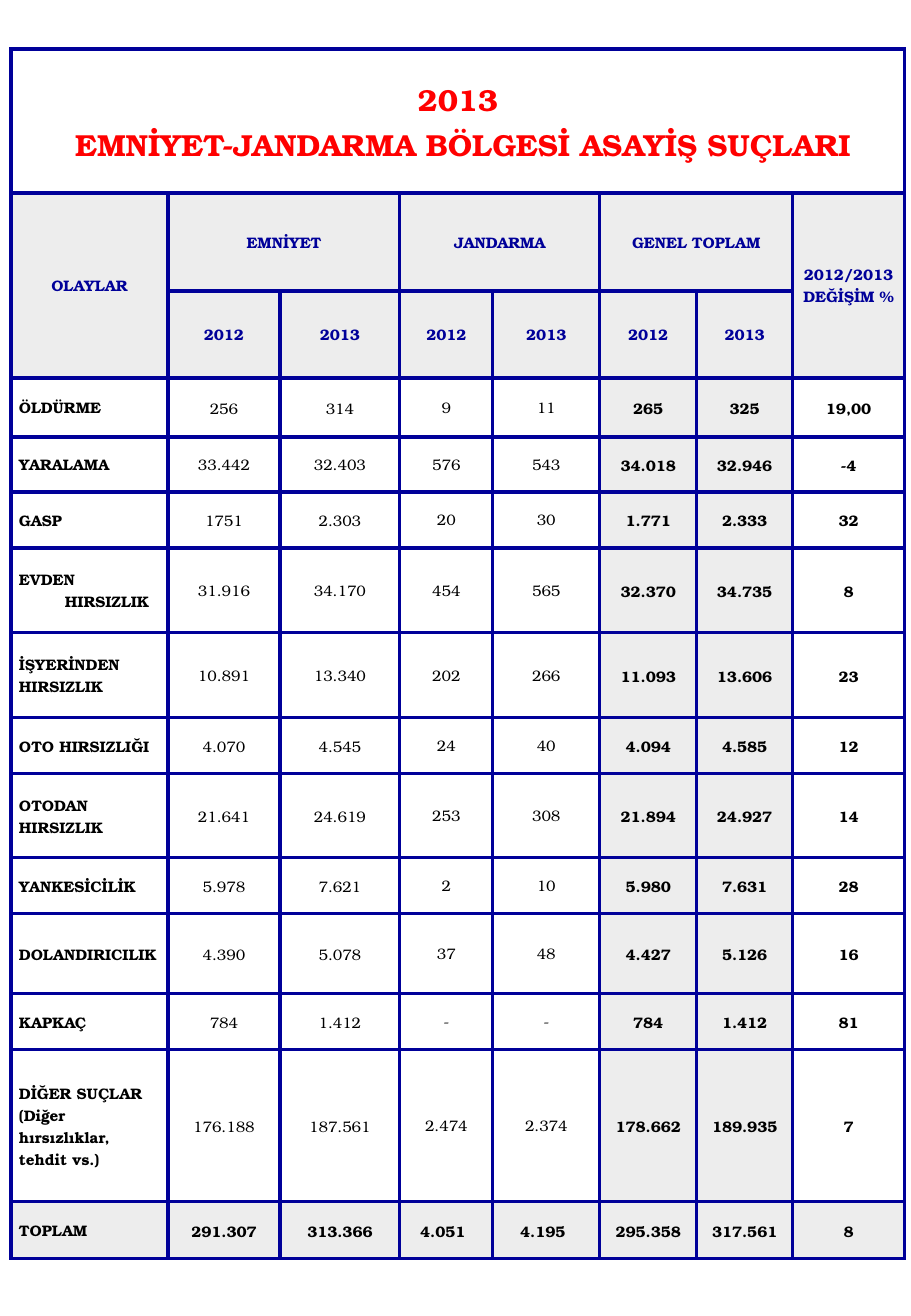
from pptx import Presentation
from pptx.dml.color import RGBColor
from pptx.enum.text import MSO_ANCHOR, PP_ALIGN
from pptx.oxml import parse_xml
from pptx.oxml.ns import nsdecls
from pptx.util import Emu, Inches, Pt

COLORS = {"navy": "000099", "red": "FF0000", "black": "000000", "gray": "EDEDED", "white": "FFFFFF"}
FONT = "TeX Gyre Bonum"
WIDE, TIGHT, TOTAL = (8, 5, 8, 5), (1, 1, 1, 0), (1, 1, 8, 0)
COLUMNS = [157, 112, 120, 93, 107, 97, 96, 112]
ROWS = [144, 98, 87, 59, 55, 56, 85, 85, 56, 84, 56, 80, 56, 152, 57]
TITLE = ["2013", " EMNİYET-JANDARMA BÖLGESİ ASAYİŞ SUÇLARI"]
HEADERS = [
    (1, 0, 2, 1, ["OLAYLAR"]),
    (1, 1, 1, 2, ["EMNİYET"]),
    (1, 3, 1, 2, ["JANDARMA"]),
    (1, 5, 1, 2, ["GENEL TOPLAM"]),
    (1, 7, 2, 1, ["2012/2013", "DEĞİŞİM %"]),
]
CRIMES = [
    (["ÖLDÜRME"], "256 314 9 11 265 325 19,00"),
    (["YARALAMA"], "33.442 32.403 576 543 34.018 32.946 -4"),
    (["GASP"], "1751 2.303 20 30 1.771 2.333 32"),
    (["EVDEN HIRSIZLIK"], "31.916 34.170 454 565 32.370 34.735 8"),
    (["İŞYERİNDEN", "HIRSIZLIK"], "10.891 13.340 202 266 11.093 13.606 23"),
    (["OTO HIRSIZLIĞI"], "4.070 4.545 24 40 4.094 4.585 12"),
    (["OTODAN HIRSIZLIK"], "21.641 24.619 253 308 21.894 24.927 14"),
    (["YANKESİCİLİK"], "5.978 7.621 2 10 5.980 7.631 28"),
    (["DOLANDIRICILIK"], "4.390 5.078 37 48 4.427 5.126 16"),
    (["KAPKAÇ"], "784 1.412 - - 784 1.412 81"),
    (["DİĞER SUÇLAR", "(Diğer hırsızlıklar, tehdit vs.)"],
     "176.188 187.561 2.474 2.374 178.662 189.935 7"),
    (["TOPLAM"], "291.307 313.366 4.051 4.195 295.358 317.561 8"),
]
UNINDENTED = {"OTODAN HIRSIZLIK", "(Diğer hırsızlıklar, tehdit vs.)"}


class CrimePage:
    def __init__(self, deck):
        self.page = deck.slides.add_slide(deck.slide_layouts[6])

    def px(self, length):
        return Emu(round(length * 914400 / 121.5))

    def table(self, left, top, columns, rows):
        frame = self.page.shapes.add_table(
            len(rows), len(columns), self.px(left), self.px(top),
            self.px(sum(columns)), self.px(sum(rows)))
        self.grid = frame.table
        for name in ("first_row", "horz_banding"):
            setattr(self.grid, name, False)
        for column, width in zip(self.grid.columns, columns):
            column.width = self.px(width)
        for row, height in zip(self.grid.rows, rows):
            row.height = self.px(height)
        for cell in self.grid.iter_cells():
            self.border(cell)
            cell.fill.background()

    def border(self, cell):
        properties = cell._tc.get_or_add_tcPr()
        for side in "LRTB":
            properties.append(parse_xml(
                f'<a:ln{side} {nsdecls("a")} w="{Pt(2.25)}"><a:solidFill>'
                f'<a:srgbClr val="{COLORS["navy"]}"/></a:solidFill></a:ln{side}>'))

    def merge(self, row, column, height, width):
        last = self.grid.cell(row + height - 1, column + width - 1)
        self.grid.cell(row, column).merge(last)

    def cell(self, row, column, lines, color="black", size=9, bold=True,
             fill=None, insets=WIDE, align=PP_ALIGN.CENTER, hanging=True):
        cell = self.grid.cell(row, column)
        cell.vertical_anchor = MSO_ANCHOR.MIDDLE
        for side, inset in zip(("left", "top", "right", "bottom"), insets):
            setattr(cell, f"margin_{side}", self.px(inset))
        if fill:
            cell.fill.solid()
            cell.fill.fore_color.rgb = RGBColor.from_string(COLORS[fill])
        for index, line in enumerate(lines):
            frame = cell.text_frame
            para = frame.add_paragraph() if index else frame.paragraphs[0]
            para.alignment = align
            if hanging and line not in UNINDENTED:
                indent = self.px(46)
                for name, value in {"marL": indent, "indent": -indent}.items():
                    para._p.get_or_add_pPr().set(name, str(value))
            span = para.add_run()
            span.text = line
            for name, value in {"name": FONT, "size": Pt(size), "bold": bold}.items():
                setattr(span.font, name, value)
            span.font.color.rgb = RGBColor.from_string(COLORS[color])

    def header(self):
        self.merge(0, 0, 1, len(COLUMNS))
        self.cell(0, 0, TITLE, color="red", size=18)
        for row, column, height, width, lines in HEADERS:
            self.merge(row, column, height, width)
            self.cell(row, column, lines, color="navy", fill="gray")
        for column in range(1, 7):
            year = "2013" if column % 2 == 0 else "2012"
            self.cell(2, column, [year], color="navy", fill="gray")

    def crime(self, row, label, values):
        total = row == len(ROWS) - 1
        self.cell(row, 0, label, align=PP_ALIGN.LEFT, fill="gray" if total else None)
        for column, value in enumerate(values.split(), 1):
            gendarmerie = column in (3, 4)
            insets = (TOTAL if total else WIDE) if gendarmerie else TIGHT
            self.cell(row, column, [value], bold=total or column > 4,
                      fill="gray" if total or column in (5, 6) else "white",
                      insets=insets, hanging=column == 4 if total else gendarmerie)


def main():
    deck = Presentation()
    deck.slide_width, deck.slide_height = Inches(7.5), Inches(10.83)
    page = CrimePage(deck)
    page.table(11, 49, COLUMNS, ROWS)
    page.header()
    for row, (label, values) in enumerate(CRIMES, 3):
        page.crime(row, label, values)
    deck.save("out.pptx")


if __name__ == "__main__":
    main()
